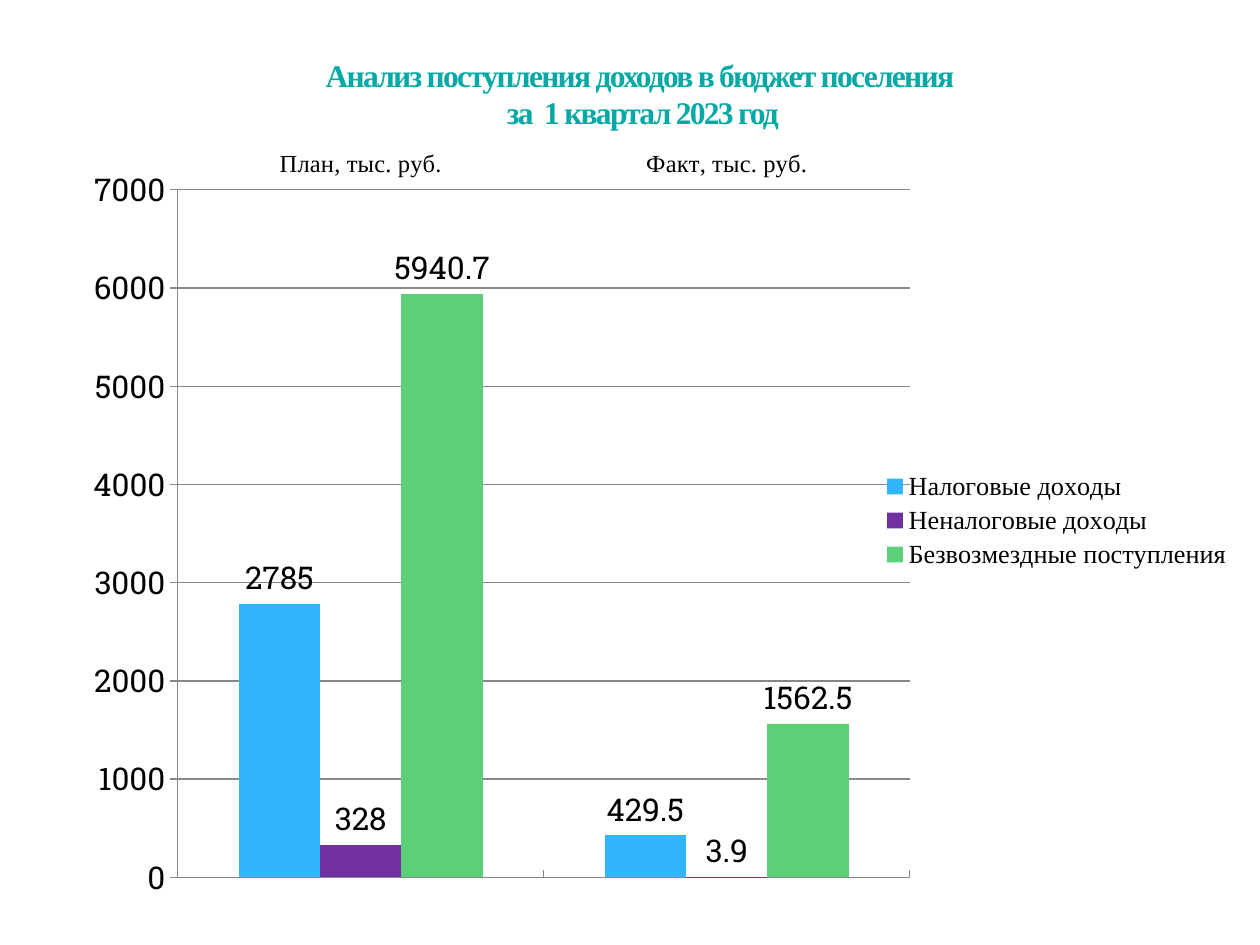
from lxml import etree
from pptx import Presentation, util as u
from pptx.chart import data
from pptx.dml.color import RGBColor
from pptx.enum import chart as ch, text
from pptx.oxml import ns

COLORS = {
    "title": "04A8A4",
    "text": "000000",
    "grid": "878787",
    "tax": "31B6FD",
    "non_tax": "7030A0",
    "grants": "5BD078",
}
SERIF = "Times New Roman"
SLAB = "Roboto Slab"


def set_font(font, name, size, color="text"):
    font.name = name
    font.size = u.Pt(size)
    font.color.rgb = RGBColor.from_string(COLORS[color])


def set_line(line):
    line.color.rgb = RGBColor.from_string(COLORS["grid"])
    line.width = u.Pt(0.75)


deck = Presentation()
deck.slide_width, deck.slide_height = u.Cm(25.4), u.Cm(19.05)
slide = deck.slides.add_slide(deck.slide_layouts[6])

# Income chart
incomes = [
    ("Налоговые доходы", (2785, 429.5), "tax"),
    ("Неналоговые доходы", (328, 3.9), "non_tax"),
    ("Безвозмездные поступления", (5940.7, 1562.5), "grants"),
]
budget = data.CategoryChartData()
budget.categories = ["План, тыс. руб.", "Факт, тыс. руб."]
for name, values, _ in incomes:
    budget.add_series(name, values)
chart = slide.shapes.add_chart(
    ch.XL_CHART_TYPE.COLUMN_CLUSTERED,
    u.Cm(1.3), u.Cm(2.92), u.Cm(23.8), u.Cm(15.19), budget,
).chart
set_font(chart.font, SLAB, 18)
chart.has_title = False

# Columns and their values
columns = chart.plots[0]
columns.gap_width = 150
columns.overlap = 0
columns.vary_by_categories = False
for income, (_, _, color) in zip(columns.series, incomes):
    income.format.fill.solid()
    income.format.fill.fore_color.rgb = RGBColor.from_string(COLORS[color])
    income.invert_if_negative = False
    labels = income.data_labels
    labels.show_value = True
    labels.position = ch.XL_LABEL_POSITION.OUTSIDE_END
    set_font(labels.font, SLAB, 18)

# Axes
periods, amounts = chart.category_axis, chart.value_axis
periods.major_tick_mark = ch.XL_TICK_MARK.INSIDE
periods.tick_label_position = ch.XL_TICK_LABEL_POSITION.HIGH
set_font(periods.tick_labels.font, SERIF, 14)
amounts.minimum_scale, amounts.maximum_scale, amounts.major_unit = 0, 7000, 1000
amounts.major_tick_mark = ch.XL_TICK_MARK.OUTSIDE
amounts.has_major_gridlines = True
set_font(amounts.tick_labels.font, SLAB, 18)
for line in (periods.format.line, amounts.format.line,
             amounts.major_gridlines.format.line):
    set_line(line)

# Legend
chart.has_legend = True
chart.legend.position = ch.XL_LEGEND_POSITION.RIGHT
chart.legend.include_in_layout = False
set_font(chart.legend.font, SERIF, 15)

# Fixed inner plot area
plot_area = chart.element.find(".//" + ns.qn("c:plotArea"))
for old in plot_area.findall(ns.qn("c:layout")):
    plot_area.remove(old)
layout = etree.Element(ns.qn("c:layout"))
plot_area.insert(0, layout)
manual = etree.SubElement(layout, ns.qn("c:manualLayout"))
for tag, val in [("layoutTarget", "inner"), ("xMode", "edge"), ("yMode", "edge"),
                 ("x", 0.096), ("y", 0.06), ("w", 0.62), ("h", 0.915)]:
    etree.SubElement(manual, ns.qn("c:" + tag)).set("val", str(val))

# Title
title = slide.shapes.add_textbox(u.Cm(2.9), u.Cm(1.12), u.Cm(20), u.Cm(2.2)).text_frame
title.word_wrap = True
title.vertical_anchor = text.MSO_ANCHOR.TOP
title.margin_top = title.margin_bottom = 0
heading = title.paragraphs[0]
heading.alignment = text.PP_ALIGN.CENTER
for i, words in enumerate(["Анализ поступления доходов в бюджет поселения",
                           " за  1 квартал 2023 год"]):
    if i:
        heading.add_line_break()
    run = heading.add_run()
    run.text = words
    set_font(run.font, SERIF, 18, "title")
    run.font.bold = True
    run.font._element.set("spc", "-100")

deck.save("out.pptx")
